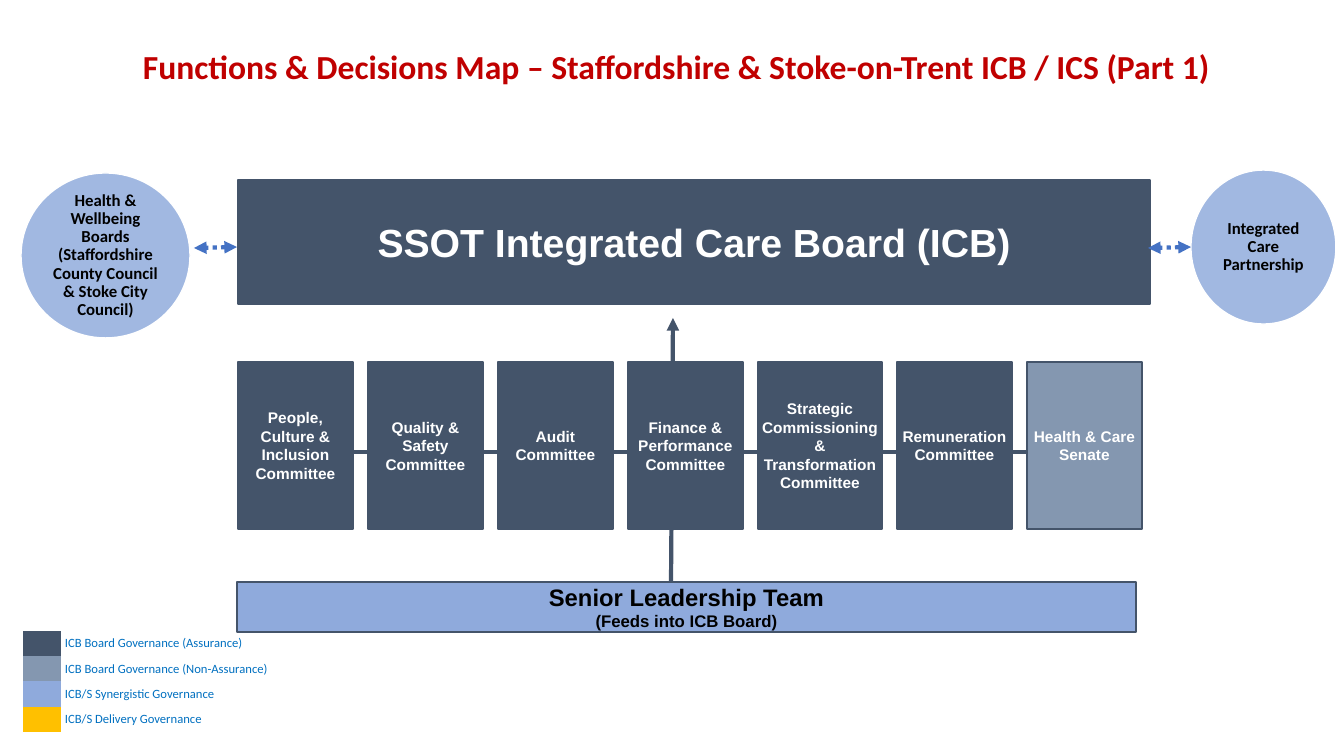
from lxml import etree
from pptx import Presentation
from pptx.dml.color import RGBColor
from pptx.enum.dml import MSO_LINE
from pptx.enum.shapes import MSO_CONNECTOR, MSO_SHAPE
from pptx.enum.text import MSO_ANCHOR, PP_ALIGN
from pptx.oxml.ns import qn
from pptx.util import Pt

RECT, OVAL = MSO_SHAPE.RECTANGLE, MSO_SHAPE.OVAL
STRAIGHT = MSO_CONNECTOR.STRAIGHT
DOTTED = MSO_LINE.ROUND_DOT
MIDDLE = MSO_ANCHOR.MIDDLE
LEFT, CENTER = PP_ALIGN.LEFT, PP_ALIGN.CENTER

EMU_PER_PX = 914400 / 100.8
PLAIN_TABLE_STYLE = "{2D5ABB26-0587-4C30-8999-92F81FD0307C}"

ASSURANCE, NON_ASSURANCE = "44546A", "8497B0"
SYNERGISTIC, DELIVERY = "8FAADC", "FFC000"
PARTNER, WHITE, BLACK = "4472C4", "FFFFFF", "000000"
TITLE_RED, LEGEND_BLUE = "C00000", "0070C0"

COMMITTEE_TOP, COMMITTEE_HEIGHT, COMMITTEE_GAP = 362, 167, 15
COMMITTEES = [
    (["People, Culture & Inclusion Committee"], 115, ASSURANCE),
    (["Quality & Safety", "Committee"], 115, ASSURANCE),
    (["Audit", "Committee"], 115, ASSURANCE),
    (["Finance & Performance Committee"], 115, ASSURANCE),
    (["Strategic Commissioning & Transformation Committee"], 124, ASSURANCE),
    (["Remuneration Committee"], 115, ASSURANCE),
    (["Health & Care Senate"], 115, NON_ASSURANCE),
]
PARTNERS = [
    ("Health & Wellbeing Boards (Staffordshire County Council & Stoke City Council)",
     (21, 173, 169, 165)),
    ("Integrated Care Partnership", (1191, 170, 145, 154)),
]
LEGEND = [
    ("ICB Board Governance (Assurance)", ASSURANCE),
    ("ICB Board Governance (Non-Assurance)", NON_ASSURANCE),
    ("ICB/S Synergistic Governance", SYNERGISTIC),
    ("ICB/S Delivery Governance", DELIVERY),
]


def px(length):
    return round(length * EMU_PER_PX)


def rgb(color):
    return RGBColor.from_string(color)


def set_margins(holder, side, end):
    holder.margin_left = holder.margin_right = px(side)
    holder.margin_top = holder.margin_bottom = px(end)


def write(frame, lines, sizes, color=WHITE, font="Arial", bold=True,
          align=CENTER, spacing=1.0):
    """Fill a text frame with one paragraph per line, each with its own size."""
    for index, (line, size) in enumerate(zip(lines, sizes)):
        paragraph = frame.add_paragraph() if index else frame.paragraphs[0]
        paragraph.alignment = align
        paragraph.line_spacing = spacing
        run = paragraph.add_run()
        run.text = line
        run.font.size = Pt(size)
        run.font.name = font
        run.font.bold = bold
        run.font.color.rgb = rgb(color)


def add_panel(slide, kind, box, fill, outline=ASSURANCE, margins=(2, 4)):
    """Add a filled shape ready to hold centred text."""
    panel = slide.shapes.add_shape(kind, *map(px, box))
    panel.shadow.inherit = False
    panel.fill.solid()
    panel.fill.fore_color.rgb = rgb(fill)
    panel.line.color.rgb = rgb(outline)
    panel.line.width = Pt(1)
    frame = panel.text_frame
    frame.word_wrap = True
    frame.vertical_anchor = MIDDLE
    set_margins(frame, *margins)
    return panel


def add_link(slide, start, end, color, arrow_ends=(), dash=None):
    link = slide.shapes.add_connector(STRAIGHT, *map(px, start + end))
    link.line.color.rgb = rgb(color)
    link.line.width = Pt(3)
    if dash:
        link.line.dash_style = dash
    outline = link.line._get_or_add_ln()
    for arrow_end in arrow_ends:
        etree.SubElement(outline, qn(f"a:{arrow_end}"), type="triangle")
    etree.SubElement(link._element.spPr, qn("a:effectLst"))


def add_title(slide):
    title = slide.shapes.title
    title.left, title.top, title.width, title.height = map(px, (80, 47, 1193, 43))
    frame = title.text_frame
    frame.word_wrap = True
    frame.vertical_anchor = MIDDLE
    set_margins(frame, 4, 4)
    write(frame,
          ["Functions & Decisions Map – Staffordshire & Stoke-on-Trent ICB / ICS (Part 1)"],
          [24], color=TITLE_RED, font="Calibri", spacing=0.9)


def add_committees(slide):
    left = 238
    for lines, width, fill in COMMITTEES:
        box = (left, COMMITTEE_TOP, width, COMMITTEE_HEIGHT)
        committee = add_panel(slide, RECT, box, fill)
        write(committee.text_frame, lines, [11] * len(lines))
        left += width + COMMITTEE_GAP


def add_partner(slide, name, box):
    partner = add_panel(slide, OVAL, box, PARTNER, outline=WHITE, margins=(0, 0))
    fill_color = partner._element.spPr.find(f"{qn('a:solidFill')}/{qn('a:srgbClr')}")
    etree.SubElement(fill_color, qn("a:alpha"), val="50000")
    write(partner.text_frame, [name], [12], color=BLACK, font="Calibri", spacing=0.9)


def add_legend(slide):
    frame = slide.shapes.add_table(len(LEGEND), 2, *map(px, (23, 631, 252, 101)))
    table = frame.table
    table.first_row = table.horz_banding = False
    table._tbl.tblPr.find(qn("a:tableStyleId")).text = PLAIN_TABLE_STYLE
    table.columns[0].width, table.columns[1].width = px(38), px(214)
    for row, (meaning, color) in enumerate(LEGEND):
        swatch, label = table.cell(row, 0), table.cell(row, 1)
        for cell in (swatch, label):
            set_margins(cell, 4, 0)
            cell.vertical_anchor = MIDDLE
        swatch.fill.solid()
        swatch.fill.fore_color.rgb = rgb(color)
        # An empty cell takes its minimum height from the end-of-paragraph size
        empty_line = swatch.text_frame.paragraphs[0]._p
        etree.SubElement(empty_line, qn("a:endParaRPr"), sz="900")
        label.fill.background()
        write(label.text_frame, [meaning], [9], color=LEGEND_BLUE,
              font="Calibri", bold=False, align=LEFT)


def main():
    deck = Presentation()
    deck.slide_width, deck.slide_height = px(1344), px(756)
    slide = deck.slides.add_slide(deck.slide_layouts[5])
    add_title(slide)

    add_link(slide, (671, 585), (673, 318), ASSURANCE, ["tailEnd"])
    add_link(slide, (338, 452), (1068, 452), ASSURANCE)

    board = add_panel(slide, RECT, (238, 180, 912, 124), ASSURANCE)
    write(board.text_frame, ["SSOT Integrated Care Board (ICB)"], [28])
    add_committees(slide)
    leadership = add_panel(slide, RECT, (237, 582, 899, 50), SYNERGISTIC)
    write(leadership.text_frame, ["Senior Leadership Team", "(Feeds into ICB Board)"],
          [17, 12], color=BLACK)

    for name, box in PARTNERS:
        add_partner(slide, name, box)
    for right, left in ((237, 194), (1191, 1148)):
        add_link(slide, (right, 247), (left, 248), PARTNER,
                 ["headEnd", "tailEnd"], dash=DOTTED)
    add_legend(slide)
    deck.save("out.pptx")


if __name__ == "__main__":
    main()
